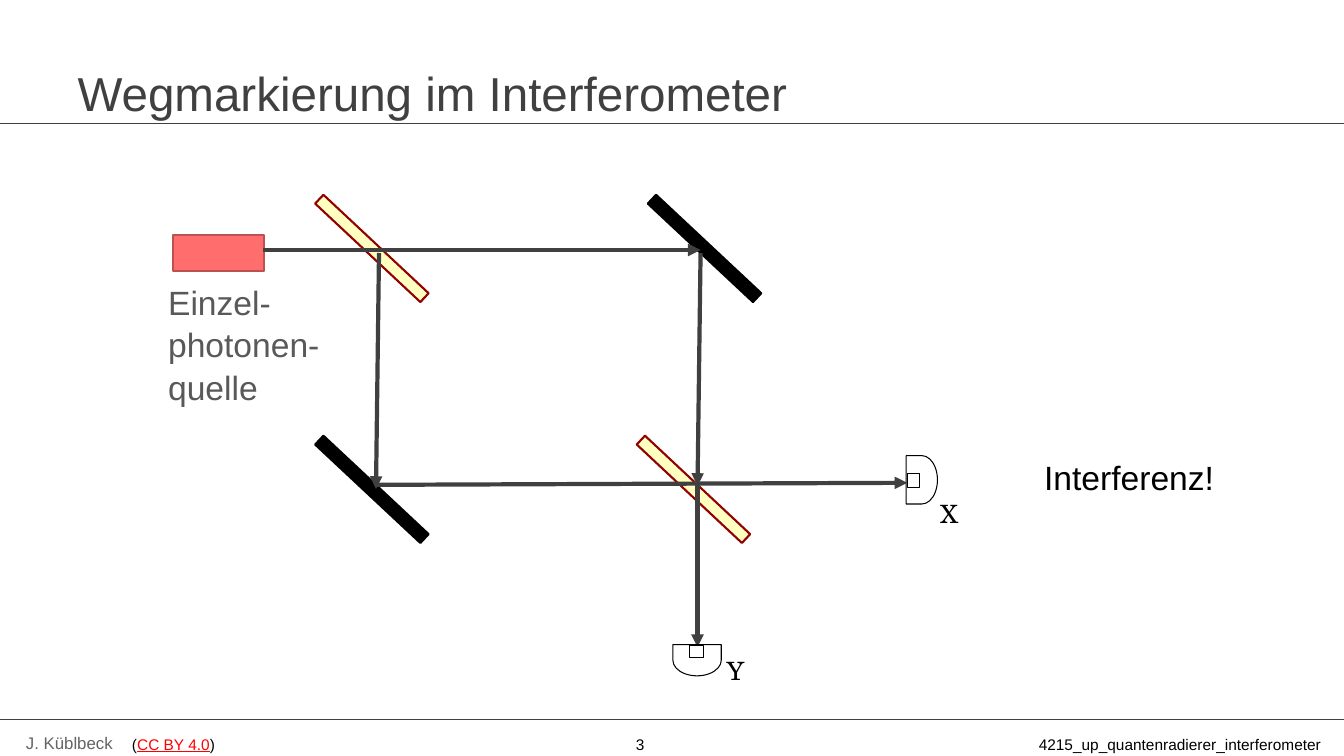
import pptx
import pptx.util
import pptx.dml.color
import pptx.enum.shapes
import pptx.enum.text
import pptx.oxml.ns
import lxml.etree

Color = pptx.dml.color.RGBColor
Form = pptx.enum.shapes.MSO_SHAPE
Align = pptx.enum.text.PP_ALIGN
Anchor = pptx.enum.text.MSO_ANCHOR

BLACK = Color(0x00, 0x00, 0x00)
WHITE = Color(0xFF, 0xFF, 0xFF)
DARK = Color(0x40, 0x40, 0x40)
GREY = Color(0x59, 0x59, 0x59)
PALE = Color(0x64, 0x64, 0x64)
RED = Color(0xFF, 0x00, 0x00)
ROSE = Color(0xFF, 0x6D, 0x6D)
BRICK = Color(0xBD, 0x51, 0x51)
CREAM = Color(0xFF, 0xFF, 0xC1)
WINE = Color(0x92, 0x00, 0x00)

COLS, ROWS = 133.33, 75
CELL = pptx.util.Inches(0.1)


def grid(*cells):
    return [round(cell * CELL) for cell in cells]


class Sheet:
    font = "Arial"
    serif = "TeX Gyre Schola"

    def __init__(self, deck):
        self.slide = deck.slides.add_slide(deck.slide_layouts[5])
        self.shapes = self.slide.shapes

    def style(self, para, size, color, font=None):
        para.font.name = font or self.font
        para.font.size = pptx.util.Pt(size)
        para.font.color.rgb = color

    def title(self, text, box):
        head = self.shapes.title
        head.left, head.top, head.width, head.height = grid(*box)
        head.text = text
        head.text_frame.vertical_anchor = Anchor.MIDDLE
        para = head.text_frame.paragraphs[0]
        para.alignment = Align.LEFT
        self.style(para, 34, DARK)

    def text(self, text, box, size, color=BLACK, font=None, wrap=True,
             align=Align.LEFT, inset=True):
        frame = self.shapes.add_textbox(*grid(*box)).text_frame
        frame.word_wrap = wrap
        if not inset:
            frame.margin_left = frame.margin_right = 0
            frame.margin_top = frame.margin_bottom = 0
        para = frame.paragraphs[0]
        para.text = text
        para.alignment = align
        self.style(para, size, color, font)
        return para

    def label(self, text, box, color):
        para = self.text(text, box, 24, color)
        para.space_before = pptx.util.Pt(3)
        para.line_spacing = 1.05
        para._p.get_or_add_pPr().set("marL", str(grid(1.2)[0]))

    def block(self, mid, size, fill, edge, width=1.5, turn=0, form=Form.RECTANGLE):
        (x, y), (w, h) = mid, size
        shape = self.shapes.add_shape(form, *grid(x - w / 2, y - h / 2, w, h))
        shape.shadow.inherit = False
        shape.rotation = turn
        shape.fill.solid()
        shape.fill.fore_color.rgb = fill
        shape.line.color.rgb = edge
        shape.line.width = pptx.util.Pt(width)

    def line(self, start, end, width=0.75, arrow=False):
        link = self.shapes.add_connector(
            pptx.enum.shapes.MSO_CONNECTOR.STRAIGHT, *grid(*start, *end))
        link.line.color.rgb = DARK
        link.line.width = pptx.util.Pt(width)
        name = pptx.oxml.ns.qn
        if arrow:
            tip = lxml.etree.SubElement(link.line._get_or_add_ln(), name("a:tailEnd"))
            tip.set("type", "triangle")
        lxml.etree.SubElement(link._element.spPr, name("a:effectLst"))

    def plate(self, mid, fill, edge):
        self.block(mid, (1.2, 14.3), fill, edge, turn=313.1)

    def sensor(self, body, chip, turn):
        self.block(body, (3.1, 4.8), WHITE, BLACK, 0.75, turn, Form.FLOWCHART_DELAY)
        self.block(chip, (1.2, 1.4), WHITE, BLACK, 0.75, turn)

    def footer(self):
        self.text("J. Küblbeck", (1.6, 72.2, 11, 3), 12, PALE)
        row = 72.9, 30, 1.9
        note = self.text("(", (13.1, *row), 11, inset=False)
        link = note.add_run()
        link.text = "CC BY 4.0"
        link.font.color.rgb = RED
        link.font.underline = True
        note.add_run().text = ")"
        self.text("3", (48.5, *row), 11, align=Align.CENTER, inset=False)
        self.text("4215_up_quantenradierer_interferometer", (101.1, *row), 11,
                  align=Align.RIGHT, inset=False)


def main():
    deck = pptx.Presentation()
    deck.slide_width, deck.slide_height = grid(COLS, ROWS)
    sheet = Sheet(deck)
    sheet.footer()
    for row in (12.3, 71.4):
        sheet.line((0, row), (COLS, row))
    sheet.title("Wegmarkierung im Interferometer", (6.7, 6, 120, 6.3))

    sheet.block((21.7, 25.1), (9, 3.6), ROSE, BRICK)
    for mid in ((36.9, 24.65), (68.8, 48.55)):
        sheet.plate(mid, CREAM, WINE)
    for mid in ((69.9, 24.65), (36.9, 48.55)):
        sheet.plate(mid, BLACK, BLACK)

    beams = (
        ((26.1, 24.8), (69.5, 24.8)),
        ((37.3, 48.1), (90, 47.9)),
        ((69.5, 25.1), (69.2, 48.2)),
        ((37.6, 25.1), (37.3, 48.5)),
        ((69.2, 48.1), (69.2, 64.2)),
    )
    for start, end in beams:
        sheet.line(start, end, 3, arrow=True)

    sheet.sensor((91.45, 47.6), (90.6, 47.7), 0)
    sheet.sensor((69.15, 65.5), (69.1, 64.6), 90)
    for name, left, top in (("X", 92.3, 48.9), ("Y", 71.1, 64.5)):
        sheet.text(name, (left, top, 3.8, 4), 18, font=sheet.serif, wrap=False)

    sheet.label("Interferenz!", (101.4, 44.6, 28.3, 6.6), BLACK)
    sheet.label("Einzel-photonen-quelle", (14.5, 27.3, 19, 14.4), GREY)
    deck.save("out.pptx")


if __name__ == "__main__":
    main()
